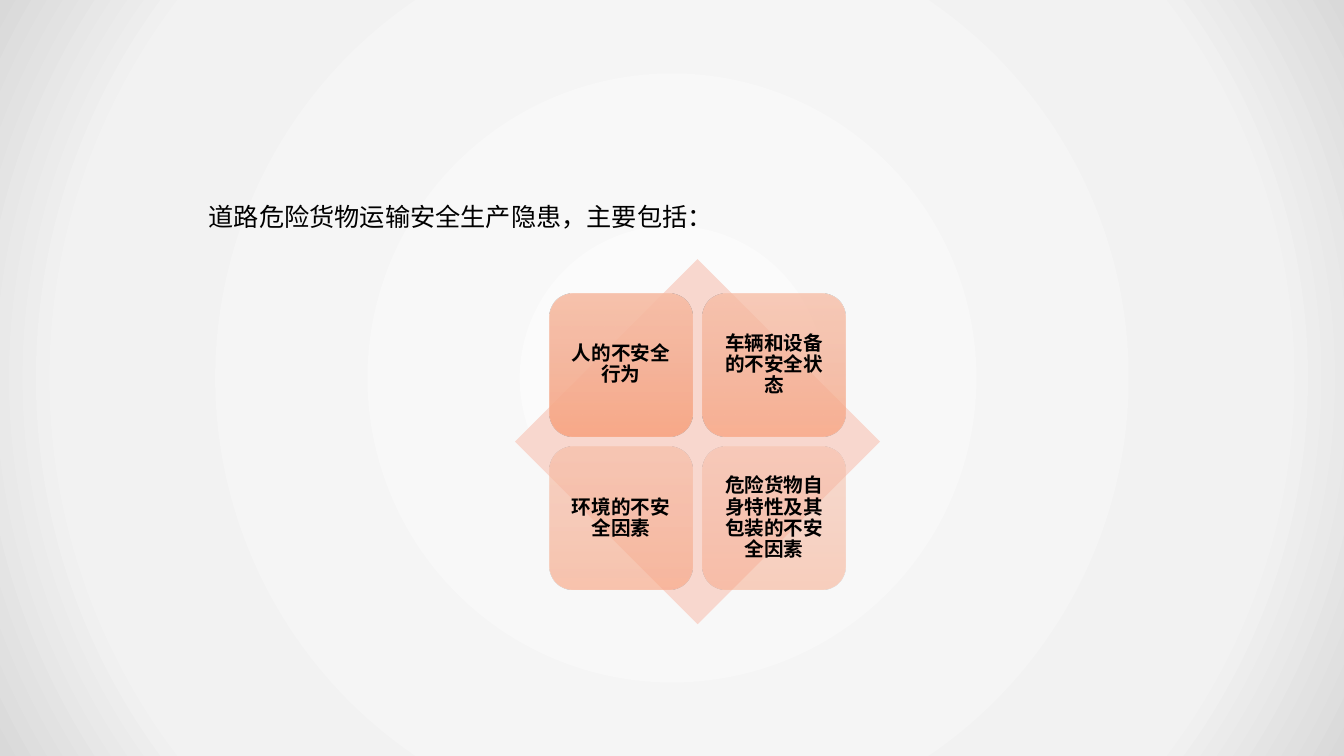
from lxml.etree import SubElement
from pptx import Presentation
from pptx.dml.color import RGBColor
from pptx.enum.shapes import MSO_SHAPE as Kind
from pptx.enum.text import MSO_ANCHOR as Anchor, PP_ALIGN as Align
from pptx.oxml.ns import qn
from pptx.util import Cm, Pt

WIDE, HIGH = 33.87, 19.05
FACE = "Noto Sans CJK SC"
GLOW = [(0, "FBFBFB"), (79, "F2F2F2"), (100, "D9D9D9")]
PEACH = [(0, "F7BDA5"), (50, "F5B196"), (100, "F8A582")]
RISKS = [
    ("人的不安全行为", 90),
    ("车辆和设备的不安全状态", 77),
    ("环境的不安全因素", 63),
    ("危险货物自身特性及其包装的不安全因素", 50),
]


def tint(code):
    return RGBColor.from_string(code)


def assign(part, values):
    for key, value in values.items():
        setattr(part, key, value)


class Deck:
    lead = {"size": Pt(18), "name": FACE}
    label = {"size": Pt(14), "name": FACE, "bold": True}
    ink = "000000"

    def __init__(self):
        self.show = Presentation()
        assign(self.show, {"slide_width": Cm(WIDE), "slide_height": Cm(HIGH)})
        self.page = self.show.slides.add_slide(self.show.slide_layouts[6])

    def shape(self, kind, box, color=None):
        item = self.page.shapes.add_shape(kind, *map(Cm, box))
        item.shadow.inherit = False
        item.line.fill.background()
        if color:
            item.fill.solid()
            item.fill.fore_color.rgb = tint(color)
        return item

    def blend(self, item, stops, alpha=100, radial=False):
        item.fill.background()
        props = item._element.spPr
        old = props.find(qn("a:noFill"))
        grad = SubElement(props, qn("a:gradFill"), rotWithShape="1")
        props.replace(old, grad)
        chain = SubElement(grad, qn("a:gsLst"))
        for place, code in stops:
            stop = SubElement(chain, qn("a:gs"), pos=str(place * 1000))
            color = SubElement(stop, qn("a:srgbClr"), val=code)
            if alpha < 100:
                SubElement(color, qn("a:alpha"), val=str(alpha * 1000))
        if radial:
            route = SubElement(grad, qn("a:path"), {"path": "circle"})
            sides = dict.fromkeys("ltrb", "50000")
            SubElement(route, qn("a:fillToRect"), sides)
        else:
            SubElement(grad, qn("a:lin"), ang="5400000", scaled="0")

    def letter(self, item, words, style, frame, para):
        assign(item.text_frame, {"word_wrap": True, **frame})
        line = item.text_frame.paragraphs[0]
        assign(line, para)
        run = line.add_run()
        run.text = words
        run.font.color.rgb = tint(self.ink)
        assign(run.font, style)
        SubElement(run._r.get_or_add_rPr(), qn("a:ea"), typeface=FACE)
        return line

    def text(self, words, box, indent):
        item = self.page.shapes.add_textbox(*map(Cm, box))
        line = self.letter(item, words, self.lead, {}, {"line_spacing": 1.5})
        line._p.get_or_add_pPr().set("indent", str(Cm(indent)))

    def tile(self, words, box, alpha):
        item = self.shape(Kind.ROUNDED_RECTANGLE, box)
        self.blend(item, PEACH, alpha)
        sides = ("left", "top", "right", "bottom")
        frame = {f"margin_{side}": Cm(0.15) for side in sides}
        frame["vertical_anchor"] = Anchor.MIDDLE
        para = {"alignment": Align.CENTER, "line_spacing": 0.9}
        self.letter(item, words, self.label, frame, para)

    def matrix(self, left, top, size):
        self.shape(Kind.DIAMOND, (left, top, size, size), "F8D7CE")
        edge, side, step = 0.095 * size, 0.39 * size, 0.42 * size
        for index, (words, alpha) in enumerate(RISKS):
            row, col = divmod(index, 2)
            x, y = left + edge + col * step, top + edge + row * step
            self.tile(words, (x, y, side, side), alpha)


def main():
    deck = Deck()
    back = deck.shape(Kind.RECTANGLE, (0, 0, WIDE, HIGH))
    deck.blend(back, GLOW, radial=True)
    deck.text("道路危险货物运输安全生产隐患，主要包括：", (3.71, 4.57, 14.96, 1.42), 1.3)
    deck.matrix(12.98, 6.53, 9.2)
    deck.show.save("out.pptx")


if __name__ == "__main__":
    main()
